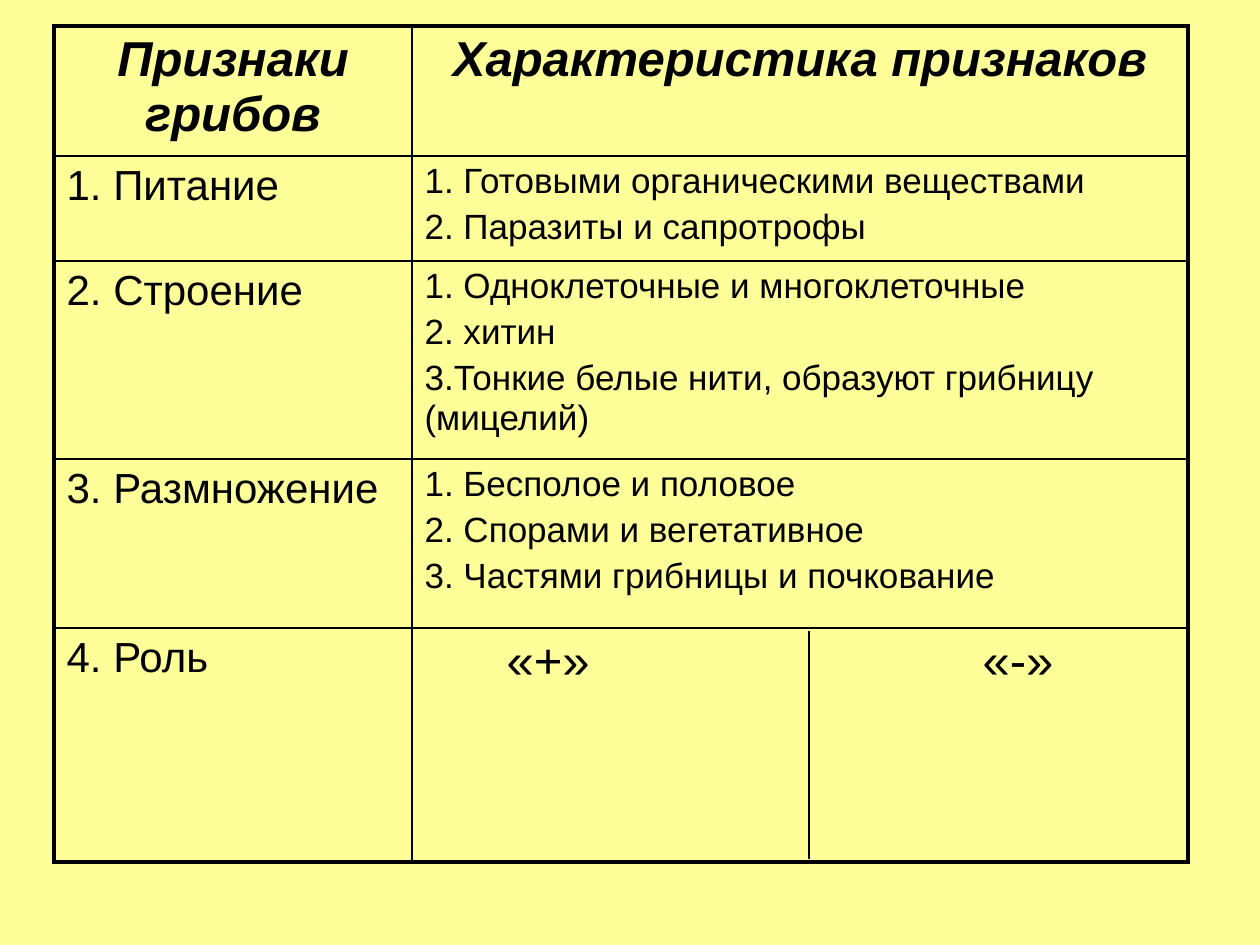
from lxml import etree
from pptx import Presentation
from pptx.dml.color import RGBColor
from pptx.enum.shapes import MSO_CONNECTOR
from pptx.enum.text import PP_ALIGN
from pptx.oxml.ns import qn
from pptx.util import Pt

LEFT, CENTER = PP_ALIGN.LEFT, PP_ALIGN.CENTER
STRAIGHT = MSO_CONNECTOR.STRAIGHT
COLORS = {"page": "FFFF99", "ink": "000000"}
FONT = "Arial"
THIN, THICK = 1, 2.25
HEAD = {"size": 28, "bold": True, "italic": True, "align": CENTER}
LABEL = {"size": 24}
BODY = {"size": 20}
SIGNS = {"size": 28, "tabs": (82, 558)}
COLS = (358, 776)
ROWS = (130, 105, 198, 169, 234)
CELLS = [
    [(["Признаки грибов"], HEAD), (["Характеристика признаков"], HEAD)],
    [(["1. Питание"], LABEL),
     (["1. Готовыми органическими веществами", "2. Паразиты и сапротрофы"], BODY)],
    [(["2. Строение"], LABEL),
     (["1. Одноклеточные и многоклеточные", "2. хитин",
       "3.Тонкие белые нити, образуют грибницу (мицелий)"], BODY)],
    [(["3. Размножение"], LABEL),
     (["1. Бесполое и половое", "2. Спорами и вегетативное",
       "3. Частями грибницы и почкование"], BODY)],
    [(["4. Роль"], LABEL), (["\t«+»\t«-»"], SIGNS)],
]


def px(n):
    """Turn px into EMU."""
    return round(n * 914400 / 126)


class Deck:
    """Hold the style and the current slide."""

    def __init__(self, wide, high):
        self.prs = Presentation()
        self.prs.slide_width, self.prs.slide_height = px(wide), px(high)
        self.slide = self.prs.slides.add_slide(self.prs.slide_layouts[6])
        self.ink = RGBColor.from_string(COLORS["ink"])
        fill = self.slide.background.fill
        fill.solid()
        fill.fore_color.rgb = RGBColor.from_string(COLORS["page"])

    def text(self, cell, lines, style):
        """Fill a cell with styled paragraphs."""
        frame = cell.text_frame
        frame.text = "\n".join(lines)
        size = style["size"]
        font = {"name": FONT, "size": Pt(size), "bold": style.get("bold", False),
                "italic": style.get("italic", False)}
        for para in frame.paragraphs:
            para.alignment = style.get("align", LEFT)
            para.space_before = Pt(size * 0.2)
            if "tabs" in style:
                stops = etree.SubElement(para._p.get_or_add_pPr(), qn("a:tabLst"))
                for stop in style["tabs"]:
                    etree.SubElement(stops, qn("a:tab"), pos=str(px(stop)), algn="l")
            for run in para.runs:
                for key, value in font.items():
                    setattr(run.font, key, value)
                run.font.color.rgb = self.ink

    def edge(self, cell, sides):
        """Draw the borders of a cell and clear its fill."""
        props = cell._tc.get_or_add_tcPr()
        for side, width in sides.items():
            line = etree.SubElement(props, qn(f"a:ln{side}"), w=str(Pt(width)))
            fill = etree.SubElement(line, qn("a:solidFill"))
            etree.SubElement(fill, qn("a:srgbClr"), val=COLORS["ink"])
        cell.fill.background()

    def table(self, left, top, cols, rows, cells):
        """Add a table with a thick outer frame."""
        size = len(rows), len(cols)
        shape = self.slide.shapes.add_table(
            *size, px(left), px(top), px(sum(cols)), px(sum(rows)))
        grid = shape.table
        grid.first_row = grid.horz_banding = False
        for col, wide in zip(grid.columns, cols):
            col.width = px(wide)
        for row, high in zip(grid.rows, rows):
            row.height = px(high)
        for r, row in enumerate(cells):
            for c, (lines, style) in enumerate(row):
                cell = grid.cell(r, c)
                self.text(cell, lines, style)
                outer = {"L": c == 0, "R": c == size[1] - 1,
                         "T": r == 0, "B": r == size[0] - 1}
                self.edge(cell, {k: THICK if out else THIN for k, out in outer.items()})

    def line(self, x1, y1, x2, y2, width):
        """Add a plain straight line."""
        line = self.slide.shapes.add_connector(STRAIGHT, px(x1), px(y1), px(x2), px(y2))
        line.line.color.rgb = self.ink
        line.line.width = Pt(width)
        etree.SubElement(line._element.spPr, qn("a:effectLst"))


def main():
    """Build and save the slide."""
    deck = Deck(1260, 945)
    deck.table(54, 26, COLS, ROWS, CELLS)
    deck.line(809, 631, 809, 859, 0.75)
    deck.prs.save("out.pptx")


if __name__ == "__main__":
    main()
